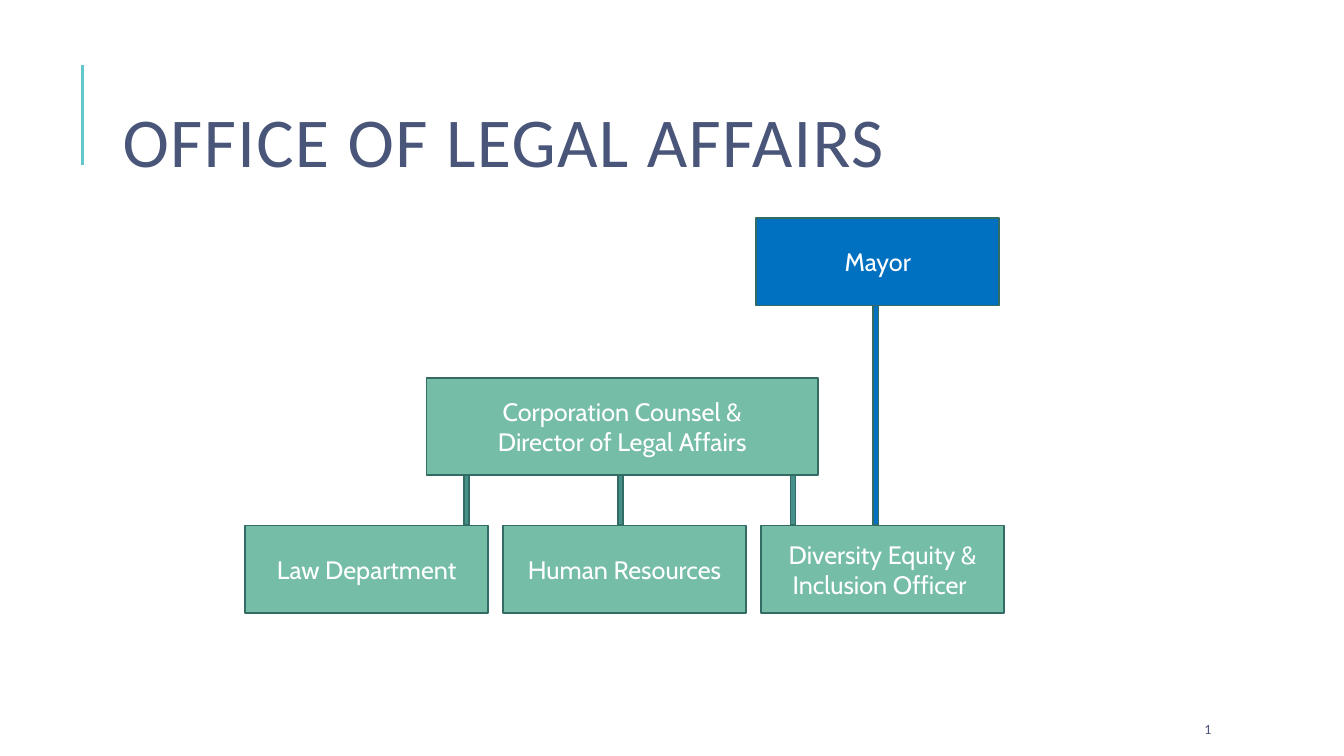
import dataclasses

import pptx
import pptx.dml.color
import pptx.enum.shapes
import pptx.enum.text
import pptx.oxml
import pptx.oxml.ns
import pptx.util
from pptx.util import Cm

ALIGN = pptx.enum.text.PP_ALIGN
MIDDLE = pptx.enum.text.MSO_ANCHOR.MIDDLE


@dataclasses.dataclass(frozen=True)
class Theme:
    ink: str = "495579"
    accent: str = "62C7CD"
    outline: str = "336B65"
    unit: str = "75BDA7"
    link: str = "459088"
    mayor: str = "0070C0"
    white: str = "FFFFFF"
    heading_font: str = "Calibri"
    box_font: str = "Cabin"
    title_size: int = 50
    box_size: int = 18
    number_size: int = 10
    rule_width: float = 1.5
    outline_width: float = 1.25


THEME = Theme()


def rgb(value):
    return pptx.dml.color.RGBColor.from_string(value)


def set_all(target, values):
    for name, value in values.items():
        setattr(target, name, value)


def write(sp, lines, font, size, color, align):
    tf = sp.text_frame
    set_all(tf, {"word_wrap": True, "vertical_anchor": MIDDLE})
    for i, line in enumerate(lines):
        p = tf.paragraphs[0] if i == 0 else tf.add_paragraph()
        p.alignment = align
        r = p.add_run()
        r.text = line
        set_all(r.font, {"name": font, "size": pptx.util.Pt(size)})
        r.font.color.rgb = rgb(color)
    return tf.paragraphs[0]


def add_block(s, x, y, w, h, fill, lines=()):
    rect = pptx.enum.shapes.MSO_SHAPE.RECTANGLE
    sp = s.shapes.add_shape(rect, Cm(x), Cm(y), Cm(w), Cm(h))
    sp.shadow.inherit = False
    sp.fill.solid()
    sp.fill.fore_color.rgb = rgb(fill)
    sp.line.color.rgb = rgb(THEME.outline)
    sp.line.width = pptx.util.Pt(THEME.outline_width)
    if lines:
        write(sp, lines, THEME.box_font, THEME.box_size, THEME.white, ALIGN.CENTER)


def add_title(s, x, y, w, h, text):
    rule_x, rule_h = x - 0.76, 2.54
    line = s.shapes.add_connector(
        pptx.enum.shapes.MSO_CONNECTOR.STRAIGHT,
        Cm(rule_x), Cm(y + rule_h), Cm(rule_x), Cm(y),
    )
    line.line.color.rgb = rgb(THEME.accent)
    line.line.width = pptx.util.Pt(THEME.rule_width)
    pptx.oxml.ns.qn("a:effectLst")
    effects = pptx.oxml.parse_xml(
        "<a:effectLst %s/>" % pptx.oxml.ns.nsdecls("a")
    )
    line._element.spPr.append(effects)
    sp = s.shapes.add_textbox(Cm(x), Cm(y), Cm(w), Cm(h))
    p = write(sp, [text], THEME.heading_font, THEME.title_size, THEME.ink, ALIGN.LEFT)
    p.line_spacing = 0.8
    p.runs[0]._r.get_or_add_rPr().set("spc", "100")


def add_org_chart(s, x, y):
    box_w, box_h, pitch, bar_w = 6.12, 2.21, 6.5, 0.13
    row_y = y + 7.75
    head_y, head_h = y + 4.04, 2.44
    head_bottom = head_y + head_h
    units = ["Law Department", "Human Resources", "Diversity Equity & Inclusion Officer "]

    for bar_x in (5.51, 9.4, 13.74):
        add_block(s, x + bar_x, head_bottom, bar_w, row_y - head_bottom, THEME.link)
    mayor_bottom = y + box_h
    add_block(s, x + 15.83, mayor_bottom, bar_w, row_y - mayor_bottom, THEME.mayor)

    for i, unit in enumerate(units):
        add_block(s, x + i * pitch, row_y, box_w, box_h, THEME.unit, [unit])
    head = ["Corporation Counsel &", "Director of Legal Affairs"]
    add_block(s, x + 4.57, head_y, 9.86, head_h, THEME.unit, head)
    add_block(s, x + 12.88, y, box_w, box_h, THEME.mayor, ["Mayor"])


def add_slide_number(s, x, y, w, h):
    sp = s.shapes.add_textbox(Cm(x), Cm(y), Cm(w), Cm(h))
    write(sp, ["1"], THEME.heading_font, THEME.number_size, THEME.ink, ALIGN.LEFT)


def main():
    prs = pptx.Presentation()
    set_all(prs, {"slide_width": Cm(33.87), "slide_height": Cm(19.05)})
    s = prs.slides.add_slide(prs.slide_layouts[6])
    add_title(s, 2.84, 1.63, 27, 4.17, "OFFICE OF LEGAL AFFAIRS")
    add_org_chart(s, 6.18, 5.49)
    add_slide_number(s, 30.1, 17.98, 2.69, 0.76)
    prs.save("out.pptx")


if __name__ == "__main__":
    main()
